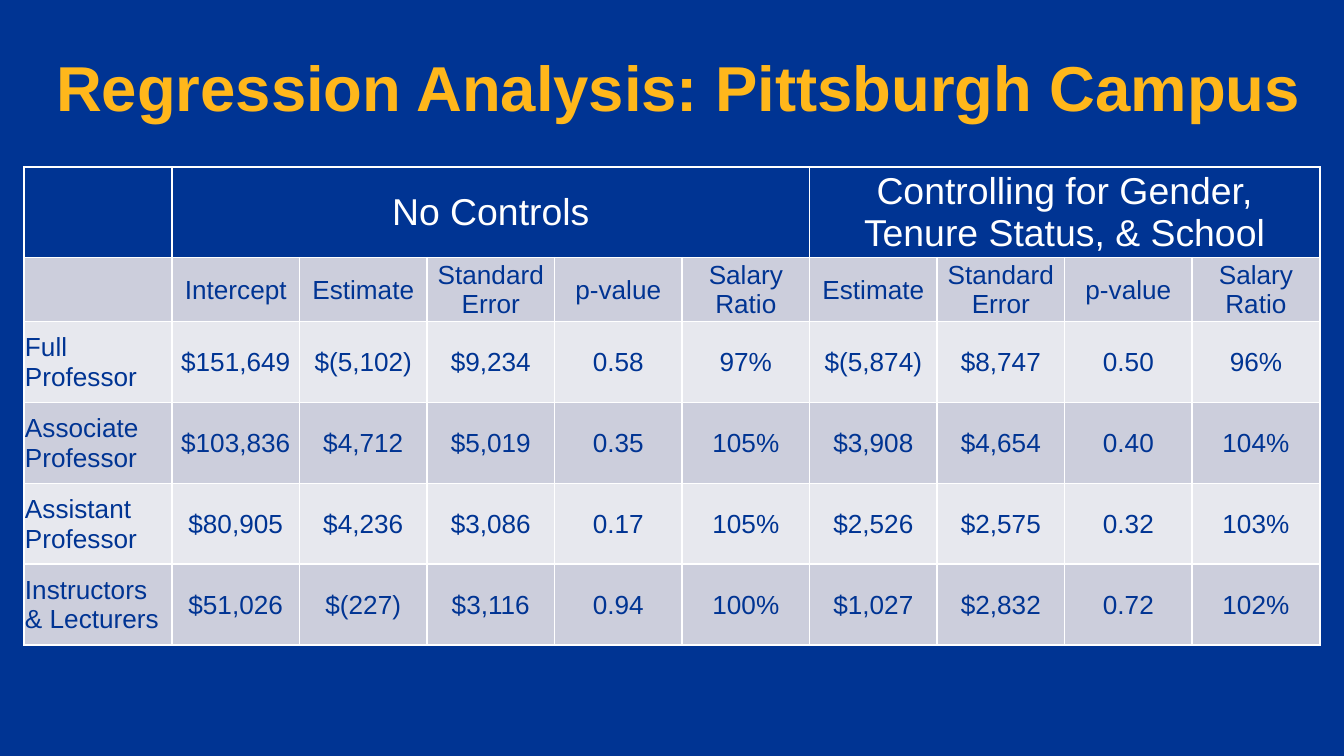
"""Build the slide of salary regression results for the Pittsburgh campus."""
from dataclasses import dataclass

from lxml import etree
from pptx import Presentation
from pptx.dml.color import RGBColor
from pptx.enum.text import MSO_ANCHOR, PP_ALIGN
from pptx.oxml.ns import qn
from pptx.util import Pt

LEFT, CENTER = PP_ALIGN.LEFT, PP_ALIGN.CENTER
MIDDLE = MSO_ANCHOR.MIDDLE
SCALE = 914400 / 134.4
FONT = "Arial"
COLORS = {
    "navy": "003493",
    "gold": "FFB71B",
    "white": "FFFFFF",
    "dark": "CCCEDC",
    "light": "E7E8EE",
}
TABLE = (24, 167, 1296)
LABEL = 148
HEIGHTS = (84, 59, 81, 81, 81, 81)


@dataclass
class Group:
    """A merged heading over a run of columns."""
    text: str
    first: int
    last: int


@dataclass
class Row:
    """A row of cells that share one fill."""
    fill: str
    cells: tuple[str, ...]


GROUPS = (
    Group("No Controls", 1, 5),
    Group("Controlling for Gender,\nTenure Status, & School", 6, 9),
)
STATS = ("Estimate", "Standard Error", "p-value", "Salary Ratio")
ROWS = (
    Row("dark", ("", "Intercept", *STATS, *STATS)),
    Row("light", ("Full Professor", "$151,649", "$(5,102)", "$9,234", "0.58", "97%",
                  "$(5,874)", "$8,747", "0.50", "96%")),
    Row("dark", ("Associate Professor", "$103,836", "$4,712", "$5,019", "0.35", "105%",
                 "$3,908", "$4,654", "0.40", "104%")),
    Row("light", ("Assistant Professor", "$80,905", "$4,236", "$3,086", "0.17", "105%",
                  "$2,526", "$2,575", "0.32", "103%")),
    Row("dark", ("Instructors & Lecturers", "$51,026", "$(227)", "$3,116", "0.94", "100%",
                 "$1,027", "$2,832", "0.72", "102%")),
)


def px(size: float) -> int:
    """Turn px into EMU."""
    return round(size * SCALE)


def tint(name: str) -> RGBColor:
    """Look up a named color."""
    return RGBColor.from_string(COLORS[name])


def write(frame, text: str, *, size: int, color: str, bold: bool = False,
          align=CENTER, lead: float = 1.0) -> None:
    """Fill a text frame, one paragraph for each line of text."""
    for num, line in enumerate(text.split("\n")):
        para = frame.add_paragraph() if num else frame.paragraphs[0]
        para.alignment = align
        para.line_spacing = lead
        run = para.add_run()
        run.text = line
        run.font.name = FONT
        run.font.size = Pt(size)
        run.font.bold = bold
        run.font.color.rgb = tint(color)


def style(cell, fill: str) -> None:
    """Give a cell its insets, white borders and fill."""
    cell.margin_left = cell.margin_top = cell.margin_right = px(1)
    cell.margin_bottom = 0
    cell.vertical_anchor = MIDDLE
    props = cell._tc.get_or_add_tcPr()
    for side in ("a:lnL", "a:lnR", "a:lnT", "a:lnB"):
        line = etree.SubElement(props, qn(side), w=str(Pt(1)))
        solid = etree.SubElement(line, qn("a:solidFill"))
        etree.SubElement(solid, qn("a:srgbClr"), val=COLORS["white"])
    cell.fill.solid()
    cell.fill.fore_color.rgb = tint(fill)


def draw_title(slide) -> None:
    """Draw the slide title."""
    frame = slide.shapes.add_textbox(px(43), px(44), px(1284), px(93)).text_frame
    frame.word_wrap = True
    frame.vertical_anchor = MIDDLE
    write(frame, "Regression Analysis: Pittsburgh Campus", size=34, color="gold",
          bold=True, align=LEFT, lead=0.9)


def draw_table(slide) -> None:
    """Draw the table of results under its group headings."""
    left, top, width = TABLE
    count = len(ROWS[0].cells)
    table = slide.shapes.add_table(len(HEIGHTS), count, px(left), px(top),
                                   px(width), px(sum(HEIGHTS))).table
    table.first_row = table.horz_banding = False
    for num, col in enumerate(table.columns):
        col.width = px((width - LABEL) / (count - 1) if num else LABEL)
    for row, height in zip(table.rows, HEIGHTS):
        row.height = px(height)
    for num in range(count):
        style(table.cell(0, num), "navy")
    for group in GROUPS:
        head = table.cell(0, group.first)
        head.merge(table.cell(0, group.last))
        write(head.text_frame, group.text, size=20, color="white")
    for num, row in enumerate(ROWS, 1):
        for pos, text in enumerate(row.cells):
            cell = table.cell(num, pos)
            style(cell, row.fill)
            if text:
                write(cell.text_frame, text, size=14, color="navy",
                      align=CENTER if pos else LEFT)


def main() -> None:
    """Build and save the deck."""
    deck = Presentation()
    deck.slide_width, deck.slide_height = px(1344), px(756)
    slide = deck.slides.add_slide(deck.slide_layouts[6])
    slide.background.fill.solid()
    slide.background.fill.fore_color.rgb = tint("navy")
    draw_title(slide)
    draw_table(slide)
    deck.save("out.pptx")


if __name__ == "__main__":
    main()
